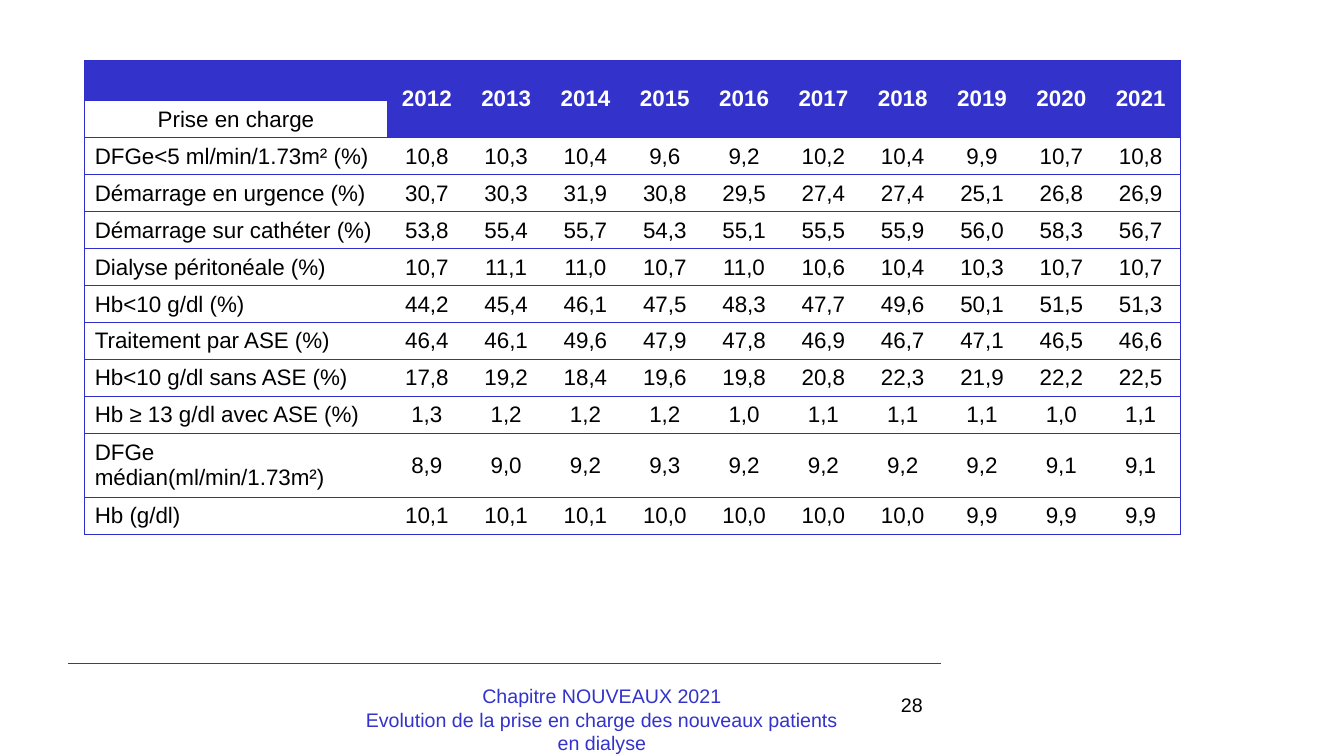
import pptx
import pptx.dml.color
import pptx.enum.shapes
import pptx.enum.text
import pptx.oxml
import pptx.oxml.ns
import pptx.util

# Content
ROW_TITLE = "Prise en charge"
YEARS = [str(year) for year in range(2012, 2022)]
INDICATORS = [
    ("DFGe<5 ml/min/1.73m² (%)", "10,8 10,3 10,4 9,6 9,2 10,2 10,4 9,9 10,7 10,8"),
    ("Démarrage en urgence (%)", "30,7 30,3 31,9 30,8 29,5 27,4 27,4 25,1 26,8 26,9"),
    ("Démarrage sur cathéter (%)", "53,8 55,4 55,7 54,3 55,1 55,5 55,9 56,0 58,3 56,7"),
    ("Dialyse péritonéale (%)", "10,7 11,1 11,0 10,7 11,0 10,6 10,4 10,3 10,7 10,7"),
    ("Hb<10 g/dl (%)", "44,2 45,4 46,1 47,5 48,3 47,7 49,6 50,1 51,5 51,3"),
    ("Traitement par ASE (%)", "46,4 46,1 49,6 47,9 47,8 46,9 46,7 47,1 46,5 46,6"),
    ("Hb<10 g/dl sans ASE (%)", "17,8 19,2 18,4 19,6 19,8 20,8 22,3 21,9 22,2 22,5"),
    ("Hb ≥ 13 g/dl avec ASE (%)", "1,3 1,2 1,2 1,2 1,0 1,1 1,1 1,1 1,0 1,1"),
    ("DFGe médian(ml/min/1.73m²)", "8,9 9,0 9,2 9,3 9,2 9,2 9,2 9,2 9,1 9,1"),
    ("Hb (g/dl)", "10,1 10,1 10,1 10,0 10,0 10,0 10,0 9,9 9,9 9,9"),
]
FOOTER = "Chapitre NOUVEAUX 2021\nEvolution de la prise en charge des nouveaux patients en dialyse"
PAGE_NUMBER = "28"

# Style
FONT = "Arial"
BLUE, GRID, BLACK, WHITE = "3333CC", "2E2ECB", "000000", "FFFFFF"
PLAIN_TABLE_STYLE = "{2D5ABB26-0587-4C30-8999-92F81FD0307C}"
LEFT, CENTER, RIGHT = (
    pptx.enum.text.PP_ALIGN.LEFT,
    pptx.enum.text.PP_ALIGN.CENTER,
    pptx.enum.text.PP_ALIGN.RIGHT,
)

# Layout in inches
TABLE_LEFT, TABLE_TOP, TABLE_WIDTH, TABLE_HEIGHT = 0.84, 0.6, 10.87, 4.67
LABEL_WIDTH, TALL_ROW_HEIGHT = 3, 0.63
TALL_ROW = 10
ROW_COUNT, COLUMN_COUNT = len(INDICATORS) + 2, len(YEARS) + 1
YEAR_WIDTH = (TABLE_WIDTH - LABEL_WIDTH) / len(YEARS)
ROW_HEIGHT = (TABLE_HEIGHT - TALL_ROW_HEIGHT) / (ROW_COUNT - 1)

inches = pptx.util.Inches


def color(value):
    return pptx.dml.color.RGBColor.from_string(value)


def write(text_frame, text, size, text_color, alignment, bold=False):
    text_frame.text = text
    for paragraph in text_frame.paragraphs:
        paragraph.alignment = alignment
        for run in paragraph.runs:
            run.font.name = FONT
            run.font.size = pptx.util.Pt(size)
            run.font.bold = bold
            run.font.color.rgb = color(text_color)


def add_text(slide, box, text, text_color, alignment):
    shape = slide.shapes.add_textbox(*(inches(length) for length in box))
    shape.text_frame.word_wrap = True
    write(shape.text_frame, text, 14, text_color, alignment)


def set_borders(cell, sides):
    properties = cell._tc.get_or_add_tcPr()
    for side in sides:
        properties.append(pptx.oxml.parse_xml(
            f'<a:ln{side} {pptx.oxml.ns.nsdecls("a")} w="9525"><a:solidFill>'
            f'<a:srgbClr val="{GRID}"/></a:solidFill></a:ln{side}>'))


def set_fill(cell, value):
    cell.fill.solid()
    cell.fill.fore_color.rgb = color(value)


def add_indicator_table(slide):
    frame = slide.shapes.add_table(
        ROW_COUNT, COLUMN_COUNT, inches(TABLE_LEFT), inches(TABLE_TOP),
        inches(TABLE_WIDTH), inches(TABLE_HEIGHT))
    table = frame.table
    table.horz_banding = False
    table._tbl.tblPr.find(pptx.oxml.ns.qn("a:tableStyleId")).text = PLAIN_TABLE_STYLE

    for index, column in enumerate(table.columns):
        column.width = inches(YEAR_WIDTH if index else LABEL_WIDTH)
    for index, row in enumerate(table.rows):
        row.height = inches(TALL_ROW_HEIGHT if index == TALL_ROW else ROW_HEIGHT)

    # The years span both header rows; the row title sits under an empty cell
    rows = [["", *YEARS], [ROW_TITLE, *[""] * len(YEARS)]]
    rows += [[label, *values.split()] for label, values in INDICATORS]
    for column_index in range(1, COLUMN_COUNT):
        table.cell(0, column_index).merge(table.cell(1, column_index))

    for row_index, texts in enumerate(rows):
        for column_index, text in enumerate(texts):
            cell = table.cell(row_index, column_index)
            header = row_index == 0 or (row_index == 1 and column_index > 0)
            label = row_index > 1 and column_index == 0
            sides = ["L"] if column_index == 0 else []
            sides += ["R"] if column_index == COLUMN_COUNT - 1 else []
            set_borders(cell, sides + ["T", "B"])
            set_fill(cell, BLUE if header else WHITE)
            cell.vertical_anchor = pptx.enum.text.MSO_ANCHOR.MIDDLE
            if not cell.is_spanned:
                write(cell.text_frame, text, 16, WHITE if header else BLACK,
                      LEFT if label else CENTER, header)


def add_footer(slide):
    rule = slide.shapes.add_connector(
        pptx.enum.shapes.MSO_CONNECTOR.STRAIGHT,
        inches(0.67), inches(6.58), inches(9.33), inches(6.58))
    rule.line.color.rgb = color(BLUE)
    rule.line.width = pptx.util.Pt(1)
    rule._element.spPr.append(
        pptx.oxml.parse_xml(f'<a:effectLst {pptx.oxml.ns.nsdecls("a")}/>'))
    add_text(slide, (7.17, 6.83, 2.08, 0.5), PAGE_NUMBER, BLACK, RIGHT)
    add_text(slide, (3.44, 6.74, 5.06, 0.5), FOOTER, BLUE, CENTER)


def main():
    presentation = pptx.Presentation()
    presentation.slide_width = inches(13.33)
    presentation.slide_height = inches(7.5)
    slide = presentation.slides.add_slide(presentation.slide_layouts.get_by_name("Blank"))
    add_footer(slide)
    add_indicator_table(slide)
    presentation.save("out.pptx")


if __name__ == "__main__":
    main()
